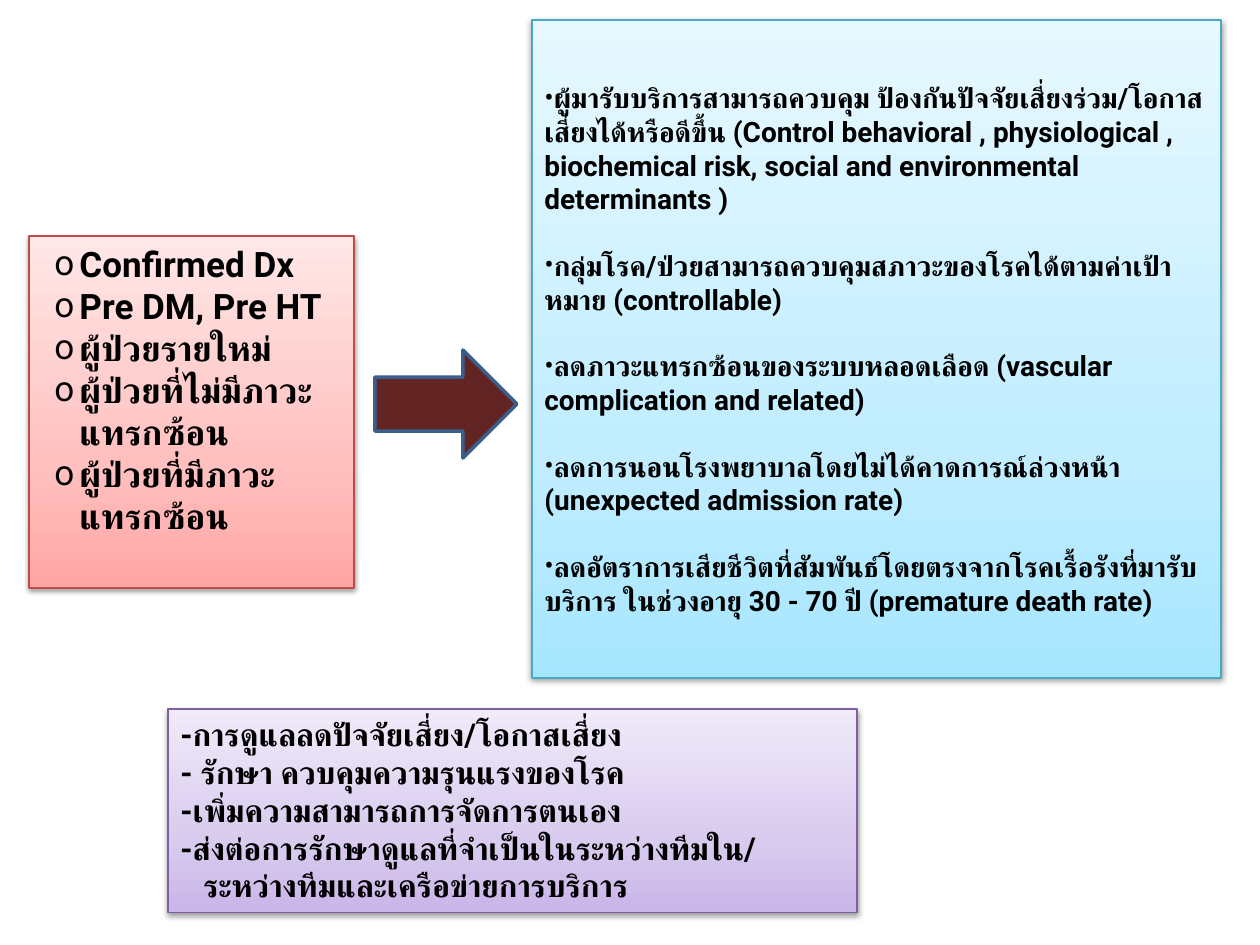
import copy

import lxml.etree
import pptx
import pptx.dml.color
import pptx.enum.shapes
import pptx.enum.text
import pptx.oxml.ns
import pptx.util

EMU_PER_PX = 914400 // 126
COLOURS = {
    "text": "000000",
    "arrow": "632523",
    "arrow_line": "3A5F8C",
    "patients": ("FFA6A5", "FFC0BF", "FFE7E7"),
    "patients_line": "BF4C48",
    "care": ("C9B5E8", "D8CBEE", "F0EAF9"),
    "care_line": "7D60A0",
    "outcomes": ("A7E6FF", "C1EDFF", "E7F8FF"),
    "outcomes_line": "46AAC5",
}
PATIENT_GROUPS = [
    "Confirmed Dx",
    "Pre DM, Pre HT",
    "ผู้ป่วยรายใหม่",
    "ผู้ป่วยที่ไม่มีภาวะแทรกซ้อน",
    "ผู้ป่วยที่มีภาวะแทรกซ้อน",
]
CARE_STEPS = [
    "-การดูแลลดปัจจัยเสี่ยง/โอกาสเสี่ยง",
    "- รักษา ควบคุมความรุนแรงของโรค",
    "-เพิ่มความสามารถการจัดการตนเอง",
    "-ส่งต่อการรักษาดูแลที่จำเป็นในระหว่างทีมใน/ระหว่างทีมและเครือข่ายการบริการ",
]
OUTCOMES = [
    "ผู้มารับบริการสามารถควบคุม ป้องกันปัจจัยเสี่ยงร่วม/โอกาสเสี่ยงได้หรือดีขึ้น "
    "(Control behavioral , physiological , biochemical risk, social and environmental determinants )",
    "กลุ่มโรค/ป่วยสามารถควบคุมสภาวะของโรคได้ตามค่าเป้าหมาย (controllable)",
    "ลดภาวะแทรกซ้อนของระบบหลอดเลือด (vascular complication and related)",
    "ลดการนอนโรงพยาบาลโดยไม่ได้คาดการณ์ล่วงหน้า (unexpected admission rate)",
    "ลดอัตราการเสียชีวิตที่สัมพันธ์โดยตรงจากโรคเรื้อรังที่มารับบริการ "
    "ในช่วงอายุ 30 - 70 ปี (premature death rate)",
]


def px(length):
    """Turn pixels into EMU."""
    return pptx.util.Emu(length * EMU_PER_PX)


def rgb(value):
    """Turn a hex string into a colour."""
    return pptx.dml.color.RGBColor.from_string(value)


def add_child(parent, tag, **attributes):
    """Append a DrawingML element."""
    return lxml.etree.SubElement(parent, pptx.oxml.ns.qn(tag), **attributes)


def add_outlined(slide, kind, box, line_colour, line_width):
    """Add a preset shape with an outline and no inherited shadow."""
    shape = slide.shapes.add_shape(kind, *map(px, box))
    shape.shadow.inherit = False
    shape.line.color.rgb = rgb(line_colour)
    shape.line.width = pptx.util.Pt(line_width)
    return shape


def add_panel(slide, box, name, anchor):
    """Add a gradient rectangle with a soft shadow and return its text frame."""
    panel = add_outlined(slide, pptx.enum.shapes.MSO_SHAPE.RECTANGLE, box, COLOURS[name + "_line"], 0.75)
    panel.fill.gradient()
    panel.fill.gradient_angle = 90
    properties = panel._element.spPr
    stops = properties.find(".//" + pptx.oxml.ns.qn("a:gsLst"))
    stops.append(copy.deepcopy(stops[-1]))
    for stop, colour, position in zip(panel.fill.gradient_stops, COLOURS[name], (0, 0.35, 1)):
        stop.color.rgb = rgb(colour)
        stop.position = position
    effects = properties.find(pptx.oxml.ns.qn("a:effectLst"))
    shadow = add_child(effects, "a:outerShdw", blurRad="40000", dist="20000", dir="5400000", rotWithShape="0")
    shade = add_child(shadow, "a:srgbClr", val="000000")
    add_child(shade, "a:alpha", val="38000")
    frame = panel.text_frame
    frame.word_wrap = True
    frame.vertical_anchor = anchor
    return frame


def add_lines(frame, lines, size, bullet=None, margin=0, hanging=0, gap=0, first_indented=0):
    """Fill a text frame with bold paragraphs."""
    for index, line in enumerate(lines):
        paragraph = frame.paragraphs[0] if index == 0 else frame.add_paragraph()
        paragraph.alignment = pptx.enum.text.PP_ALIGN.LEFT
        paragraph.space_before = pptx.util.Pt(gap if index else 0)
        properties = paragraph._p.get_or_add_pPr()
        if index >= first_indented:
            properties.set("marL", str(px(margin)))
            properties.set("indent", str(-px(hanging)))
        if bullet:
            add_child(properties, "a:buFont", typeface="Roboto")
            add_child(properties, "a:buChar", char=bullet)
        run = paragraph.add_run()
        run.text = line
        run.font.name = "Roboto"
        run.font.size = pptx.util.Pt(size)
        run.font.bold = True
        run.font.color.rgb = rgb(COLOURS["text"])
        add_child(run._r.get_or_add_rPr(), "a:cs", typeface="Roboto")


def add_arrow(slide, box):
    """Add the block arrow that points from the patients to the outcomes."""
    arrow = add_outlined(slide, pptx.enum.shapes.MSO_SHAPE.DOWN_ARROW, box, COLOURS["arrow_line"], 2)
    arrow.fill.solid()
    arrow.fill.fore_color.rgb = rgb(COLOURS["arrow"])
    arrow.rotation = 270


def main():
    """Build and save the slide."""
    deck = pptx.Presentation()
    deck.slide_width, deck.slide_height = pptx.util.Inches(10), pptx.util.Inches(7.5)
    slide = deck.slides.add_slide(deck.slide_layouts[6])
    top, middle = pptx.enum.text.MSO_ANCHOR.TOP, pptx.enum.text.MSO_ANCHOR.MIDDLE

    patients = add_panel(slide, (29, 236, 325, 352), "patients", top)
    add_lines(patients, PATIENT_GROUPS, 20, bullet="o", margin=38, hanging=25)

    care = add_panel(slide, (168, 709, 689, 204), "care", top)
    add_lines(care, CARE_STEPS, 18, margin=23, hanging=23, first_indented=2)

    outcomes = add_panel(slide, (532, 20, 689, 658), "outcomes", middle)
    add_lines(outcomes, OUTCOMES, 16, bullet="•", gap=19)

    add_arrow(slide, (392, 333, 108, 142))
    deck.save("out.pptx")


if __name__ == "__main__":
    main()
